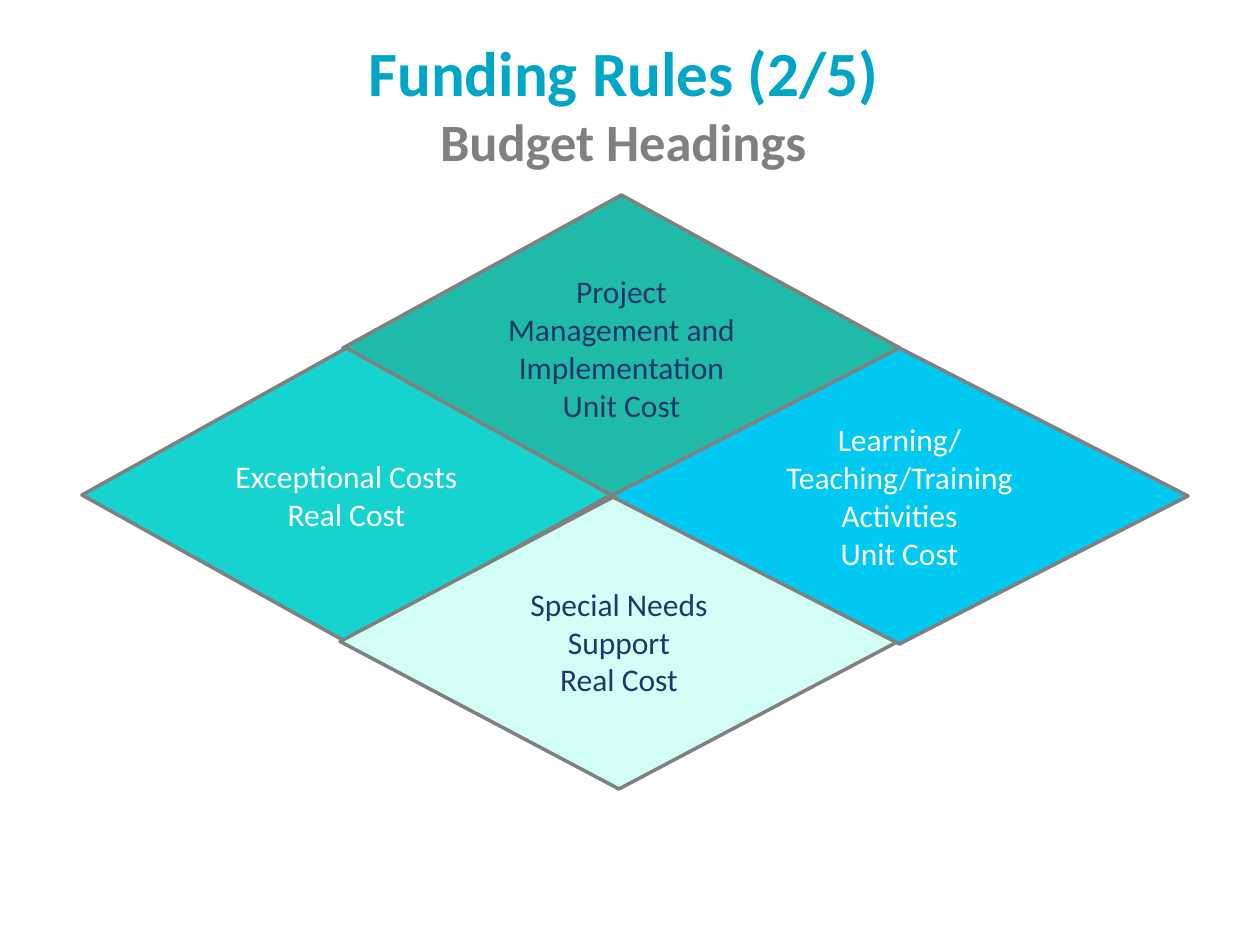
from dataclasses import dataclass

from pptx import Presentation
from pptx.dml.color import RGBColor
from pptx.enum.shapes import MSO_SHAPE
from pptx.enum.text import MSO_ANCHOR, PP_ALIGN
from pptx.util import Emu, Pt

PIXELS_PER_INCH = 126


def px(length: int) -> Emu:
    return Emu(round(length * 914400 / PIXELS_PER_INCH))


@dataclass(frozen=True)
class Theme:
    font: str = "Calibri"
    title: str = "01A6C7"
    gray: str = "808080"
    navy: str = "20376A"
    white: str = "FFFFFF"
    teal: str = "20BAA8"
    turquoise: str = "17D3CF"
    mint: str = "D2FEF5"
    sky: str = "01C9F1"
    title_size: int = 36
    subtitle_size: int = 30
    body_size: int = 18
    outline_width: int = 2


THEME = Theme()


@dataclass(frozen=True)
class BudgetHeading:
    lines: tuple[str, ...]
    left: int
    top: int
    width: int
    height: int
    fill: str
    text_color: str


# Diamonds from back to front
HEADINGS = (
    BudgetHeading(("Project Management and Implementation", "Unit Cost"),
                  343, 195, 557, 306, THEME.teal, THEME.navy),
    BudgetHeading(("Exceptional Costs", "Real Cost"),
                  82, 348, 529, 294, THEME.turquoise, THEME.white),
    BudgetHeading(("Special Needs Support", "Real Cost"),
                  340, 494, 558, 295, THEME.mint, THEME.navy),
    BudgetHeading(("Learning/", "Teaching/Training Activities", "Unit Cost"),
                  611, 348, 577, 296, THEME.sky, THEME.white),
)


def write_line(text_frame, text: str, *, size: int, color: str,
               bold: bool = False, first: bool = False) -> None:
    """Write one centred paragraph; the first uses the existing paragraph."""
    paragraph = text_frame.paragraphs[0] if first else text_frame.add_paragraph()
    paragraph.alignment = PP_ALIGN.CENTER
    run = paragraph.add_run()
    run.text = text
    run.font.name = THEME.font
    run.font.size = Pt(size)
    run.font.bold = bold
    run.font.color.rgb = RGBColor.from_string(color)


def draw_title(slide) -> None:
    box = slide.shapes.add_textbox(px(68), px(32), px(1111), px(141))
    text_frame = box.text_frame
    text_frame.word_wrap = True
    text_frame.vertical_anchor = MSO_ANCHOR.MIDDLE
    text_frame.margin_top = text_frame.margin_bottom = 0
    write_line(text_frame, "Funding Rules (2/5)", size=THEME.title_size,
               color=THEME.title, bold=True, first=True)
    write_line(text_frame, "Budget Headings", size=THEME.subtitle_size,
               color=THEME.gray, bold=True)


def draw_heading(slide, heading: BudgetHeading) -> None:
    shape = slide.shapes.add_shape(
        MSO_SHAPE.FLOWCHART_DECISION, px(heading.left), px(heading.top),
        px(heading.width), px(heading.height))
    shape.shadow.inherit = False
    shape.fill.solid()
    shape.fill.fore_color.rgb = RGBColor.from_string(heading.fill)
    shape.line.color.rgb = RGBColor.from_string(THEME.gray)
    shape.line.width = Pt(THEME.outline_width)
    text_frame = shape.text_frame
    text_frame.word_wrap = True
    text_frame.vertical_anchor = MSO_ANCHOR.MIDDLE
    for index, line in enumerate(heading.lines):
        write_line(text_frame, line, size=THEME.body_size,
                   color=heading.text_color, first=index == 0)


def main() -> None:
    presentation = Presentation()
    presentation.slide_width = px(1260)
    presentation.slide_height = px(945)
    slide = presentation.slides.add_slide(presentation.slide_layouts[6])
    draw_title(slide)
    for heading in HEADINGS:
        draw_heading(slide, heading)
    presentation.save("out.pptx")


if __name__ == "__main__":
    main()
